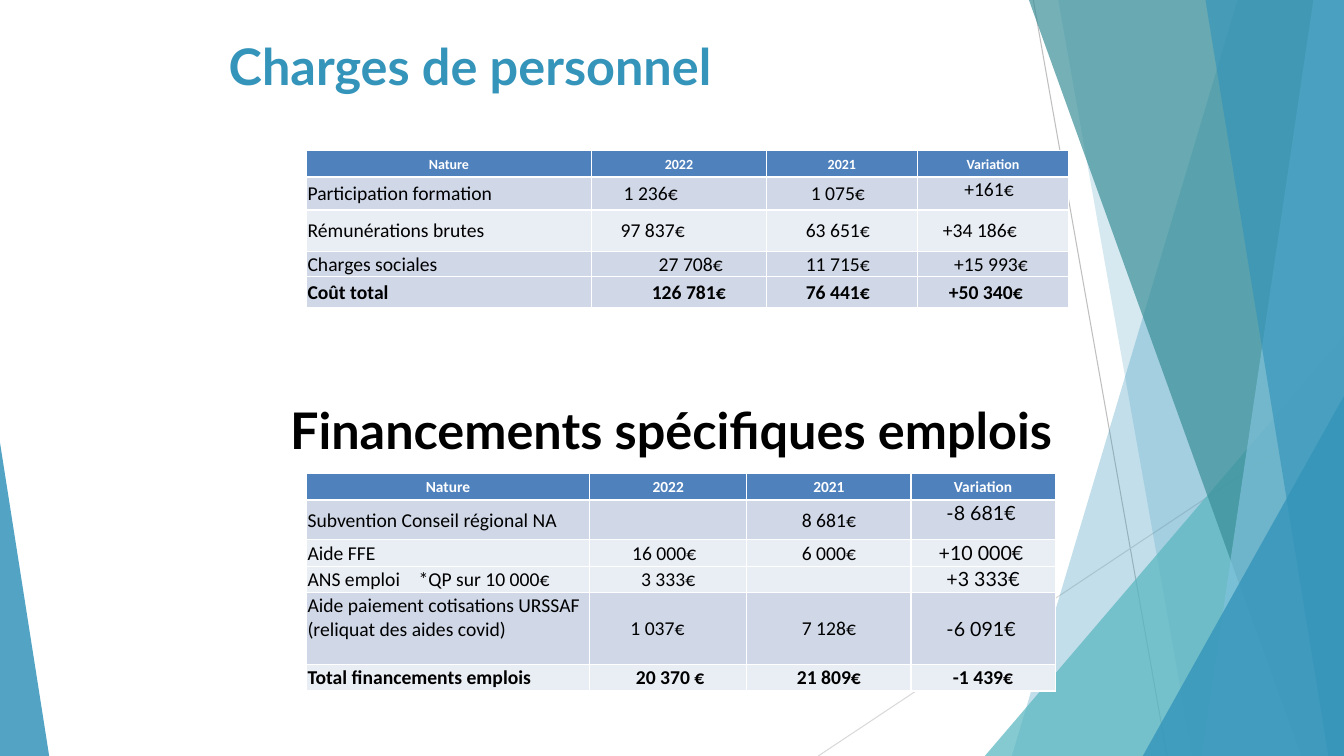
from lxml import etree
from pptx import Presentation
from pptx import util as u
from pptx.dml.color import RGBColor
from pptx.enum import shapes, text
from pptx.oxml.ns import qn

WIDTH, HEIGHT = 33.87, 19.05
COLORS = {
    "blue": "3494BA", "teal": "58B6C0", "deep": "3A8F98", "sky": "7FC1DB",
    "header": "4F81BD", "band": "D0D8E8", "light": "E9EDF4",
    "white": "FFFFFF", "black": "000000", "line": "BFBFBF", "pale line": "D9D9D9",
}


class SlideBuilder:
    heading_font, table_font = "Lato", "Calibri"

    def __init__(self, deck):
        self.page = deck.slides.add_slide(deck.slide_layouts[5])
        self.shapes = self.page.shapes

    def color(self, name):
        return RGBColor.from_string(COLORS[name])

    def fill(self, shape, name, opacity):
        shape.shadow.inherit = False
        shape.fill.solid()
        shape.fill.fore_color.rgb = self.color(name)
        shape.line.fill.background()
        tint = shape._element.spPr.find(".//" + qn("a:srgbClr"))
        etree.SubElement(tint, qn("a:alpha"), val=str(opacity * 1000))

    def line(self, start, end, name):
        line = self.shapes.add_connector(
            shapes.MSO_CONNECTOR.STRAIGHT, *(u.Cm(v) for v in start + end))
        line.line.color.rgb = self.color(name)
        line.line.width = u.Pt(0.75)
        etree.SubElement(line._element.spPr, qn("a:effectLst"))

    def blade(self, top, bottom, name, opacity):
        """Fill the area right of a slanted edge from x=top to x=bottom."""
        corners = [(top, 0), (WIDTH, 0), (WIDTH, HEIGHT), (bottom, HEIGHT)]
        points = [(u.Cm(x), u.Cm(y)) for x, y in corners]
        outline = self.shapes.build_freeform(*points[0])
        outline.add_line_segments(points[1:], close=True)
        self.fill(outline.convert_to_shape(), name, opacity)

    def triangle(self, left, top, width, apex, name, opacity):
        """Stand a right-angled triangle on the bottom of the slide."""
        box = (u.Cm(v) for v in (left, top, width, HEIGHT - top))
        shape = self.shapes.add_shape(shapes.MSO_SHAPE.ISOSCELES_TRIANGLE, *box)
        shape.adjustments[0] = apex
        self.fill(shape, name, opacity)

    def style(self, para, size, name, bold, font):
        for span in para.runs:
            span.font.size = u.Pt(size)
            span.font.name = font
            span.font.bold = bold
            span.font.color.rgb = self.color(name)

    def heading(self, box, wording, name, align):
        frame = box.text_frame
        frame.text = wording
        frame.word_wrap = True
        frame.auto_size = text.MSO_AUTO_SIZE.NONE
        frame.vertical_anchor = text.MSO_ANCHOR.TOP
        para = frame.paragraphs[0]
        para.alignment = align
        self.style(para, 36, name, True, self.heading_font)

    def title(self, wording, left, top, width, height):
        box = self.shapes.title
        box.left, box.top, box.width, box.height = (
            u.Cm(v) for v in (left, top, width, height))
        self.heading(box, wording, "blue", text.PP_ALIGN.LEFT)

    def subtitle(self, wording, *place):
        box = self.shapes.add_textbox(*(u.Cm(v) for v in place))
        self.heading(box, wording, "black", text.PP_ALIGN.CENTER)

    def borders(self, cell, row):
        properties = cell._tc.get_or_add_tcPr()
        for side in "LRTB":
            thick = (row, side) in ((0, "B"), (1, "T"))
            edge = etree.SubElement(properties, qn("a:ln" + side),
                                    w=str(u.Pt(1.5 if thick else 1)))
            paint = etree.SubElement(edge, qn("a:solidFill"))
            etree.SubElement(paint, qn("a:srgbClr"), val=COLORS["white"])

    def cell(self, cell, row, wording, fill, shift=0.0, align=text.PP_ALIGN.CENTER,
             anchor=text.MSO_ANCHOR.MIDDLE, **style):
        """Fill a cell; shift moves centred text sideways, in cm."""
        self.borders(cell, row)
        cell.fill.solid()
        cell.fill.fore_color.rgb = self.color(fill)
        cell.margin_left = u.Cm(0.03 + max(0, 2 * shift))
        cell.margin_right = u.Cm(0.03 + max(0, -2 * shift))
        cell.margin_top, cell.margin_bottom = u.Cm(0.03), 0
        cell.vertical_anchor = anchor
        para = cell.text_frame.paragraphs[0]
        para.alignment = align
        if wording:
            para.text = wording
            self.style(para, **style)
        else:
            etree.SubElement(para._p, qn("a:endParaRPr"), sz=str(style["size"] * 100))
        if "\t" in wording:
            stops = etree.SubElement(para._p.get_or_add_pPr(), qn("a:tabLst"))
            etree.SubElement(stops, qn("a:tab"), pos=str(u.Cm(2.8)), algn="l")

    def table(self, left, top, widths, heights, rows, fills, header_size,
              top_cells, variation_font):
        """Place a table whose last row is a bold total."""
        place = (u.Cm(v) for v in (left, top, sum(widths), sum(heights)))
        grid = self.shapes.add_table(len(heights), len(widths), *place).table
        for column, width in zip(grid.columns, widths):
            column.width = u.Cm(width)
        for line, height in zip(grid.rows, heights):
            line.height = u.Cm(height)
        for c, name in enumerate(("Nature", "2022", "2021", "Variation")):
            self.cell(grid.cell(0, c), 0, name, "header", size=header_size,
                      name="white", bold=True, font=self.table_font)
        for r, ((label, *values), fill) in enumerate(zip(rows, fills), 1):
            total = r == len(rows)
            for c, (wording, shift) in enumerate([(label, 0), *values]):
                special = c == 3 and not total
                self.cell(
                    grid.cell(r, c), r, wording, fill, shift,
                    align=text.PP_ALIGN.CENTER if c else text.PP_ALIGN.LEFT,
                    anchor=text.MSO_ANCHOR.TOP if (r, c) in top_cells
                    else text.MSO_ANCHOR.MIDDLE,
                    size=14, name="black", bold=total,
                    font=variation_font if special else self.table_font)


def draw_decor(slide):
    slide.line((26.04, 0), (29.41, HEIGHT), "line")
    slide.line((WIDTH, 10.24), (20.62, HEIGHT), "pale line")
    slide.blade(31.19, 25.5, "blue", 30)
    slide.blade(26.67, 30.05, "blue", 20)
    slide.triangle(24.82, 8.46, 9.05, 1, "teal", 72)
    slide.blade(25.93, 32.79, "deep", 70)
    slide.blade(33.1, 30.28, "sky", 70)
    slide.blade(30.38, 33.48, "blue", 65)
    slide.triangle(28.8, 9.98, 5.07, 1, "blue", 80)
    slide.triangle(0, 11.15, 1.24, 0, "blue", 85)


def main():
    deck = Presentation()
    deck.slide_width, deck.slide_height = u.Cm(WIDTH), u.Cm(HEIGHT)
    slide = SlideBuilder(deck)
    draw_decor(slide)
    slide.title("Charges de personnel", 5.51, 0.76, 22.86, 2.16)
    slide.subtitle("Financements spécifiques emplois", 6.02, 9.93, 21.79, 1.8)
    slide.table(
        7.72, 3.8, [7.19, 4.4, 3.81, 3.81], [0.66, 0.83, 1.04, 0.63, 0.78],
        [("Participation formation", ("1 236€", -0.71), ("1 075€", -0.1), ("+161€", -0.1)),
         ("Rémunérations brutes", ("97 837€", -0.66), ("63 651€", -0.1), ("+34 186€", -0.33)),
         ("Charges sociales", ("27 708€", 0.3), ("11 715€", -0.1), ("+15 993€", -0.05)),
         ("Coût total", ("126 781€", 0.25), ("76 441€", -0.1), ("+50 340€", -0.18))],
        ["band", "light", "band", "band"], header_size=10,
        top_cells={(1, 3), (3, 3)}, variation_font=slide.table_font)
    slide.table(
        7.72, 11.93, [7.14, 3.96, 4.14, 3.63], [0.67, 1, 0.67, 0.67, 1.8, 0.67],
        [("Subvention Conseil régional NA", ("", 0), ("8 681€", 0), ("-8 681€", -0.05)),
         ("Aide FFE", ("16 000€", -0.1), ("6 000€", 0), ("+10 000€", -0.05)),
         ("ANS emploi\t*QP sur 10 000€", ("3 333€", 0), ("", 0), ("+3 333€", 0)),
         ("Aide paiement cotisations URSSAF (reliquat des aides covid)",
          ("1 037€", -0.27), ("7 128€", 0), ("-6 091€", -0.05)),
         ("Total financements emplois", ("20 370 €", 0.05), ("21 809€", 0), ("-1 439€", 0))],
        ["band", "light", "light", "band", "light"], header_size=11,
        top_cells={(1, 3), (2, 3), (3, 3), (4, 0)}, variation_font=slide.heading_font)
    deck.save("out.pptx")


if __name__ == "__main__":
    main()
